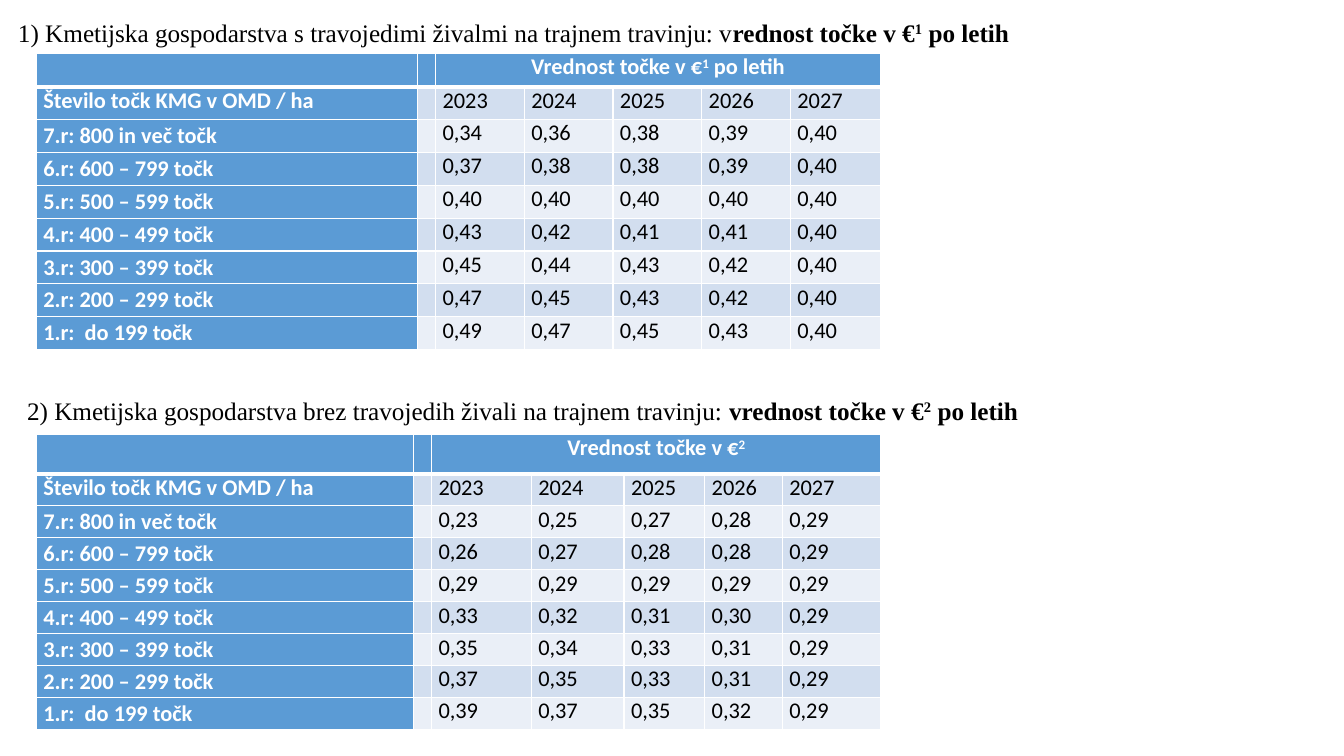
from dataclasses import dataclass
from lxml import etree
from pptx import Presentation
from pptx.dml.color import RGBColor
from pptx.enum import text as tx
from pptx.oxml import ns
from pptx.util import Inches, Pt


@dataclass(frozen=True)
class Theme:
    head: str = "5B9BD5"
    dark: str = "D2DEEF"
    light: str = "EAEFF7"
    white: str = "FFFFFF"
    black: str = "000000"
    serif: str = "Times New Roman"
    sans: str = "Calibri"
    title: int = 18
    body: int = 16
    gap: float = 0.9
    thin: int = 1
    thick: int = 3


T = Theme()
YEARS = ["2023", "2024", "2025", "2026", "2027"]
LABELS = [
    "Število točk KMG v OMD / ha",
    "7.r: 800 in več točk",
    "6.r: 600 – 799 točk",
    "5.r: 500 – 599 točk",
    "4.r: 400 – 499 točk",
    "3.r: 300 – 399 točk",
    "2.r: 200 – 299 točk",
    "1.r:  do 199 točk",
]
GRAZING = [
    "0,34 0,36 0,38 0,39 0,40",
    "0,37 0,38 0,38 0,39 0,40",
    "0,40 0,40 0,40 0,40 0,40",
    "0,43 0,42 0,41 0,41 0,40",
    "0,45 0,44 0,43 0,42 0,40",
    "0,47 0,45 0,43 0,42 0,40",
    "0,49 0,47 0,45 0,43 0,40",
]
OTHER = [
    "0,23 0,25 0,27 0,28 0,29",
    "0,26 0,27 0,28 0,28 0,29",
    "0,29 0,29 0,29 0,29 0,29",
    "0,33 0,32 0,31 0,30 0,29",
    "0,35 0,34 0,33 0,31 0,29",
    "0,37 0,35 0,33 0,31 0,29",
    "0,39 0,37 0,35 0,32 0,29",
]


def style(para, face, size, color, bold=None):
    para.space_after = Pt(T.gap)
    font = para.font
    font.name, font.size, font.bold = face, Pt(size), bold
    font.color.rgb = RGBColor.from_string(color)


def add_run(para, words, bold=None, raised=False):
    run = para.add_run()
    run.text = words
    if bold is not None:
        run.font.bold = bold
    if raised:
        run._r.get_or_add_rPr().set("baseline", "30000")


def add_title(slide, box, plain, strong, mark, align):
    frame = slide.shapes.add_textbox(*map(Inches, box)).text_frame
    frame.word_wrap = True
    frame.auto_size = tx.MSO_AUTO_SIZE.SHAPE_TO_FIT_TEXT
    para = frame.paragraphs[0]
    para.alignment = align
    style(para, T.serif, T.title, T.black)
    add_run(para, plain, False)
    add_run(para, strong, True)
    add_run(para, mark, True, True)
    add_run(para, " po letih", True)


def set_edges(cell, top, bottom):
    props = cell._tc.get_or_add_tcPr()
    widths = {"L": T.thin, "R": T.thin, "T": top, "B": bottom}
    for spot, (side, width) in enumerate(widths.items()):
        line = etree.Element(ns.qn(f"a:ln{side}"), w=str(Pt(width)))
        fill = etree.SubElement(line, ns.qn("a:solidFill"))
        etree.SubElement(fill, ns.qn("a:srgbClr"), val=T.white)
        props.insert(spot, line)


def dress(cell, row, col):
    cell.margin_left = cell.margin_right = Inches(0.07)
    cell.margin_top = cell.margin_bottom = 0
    head = row == 0 or col == 0
    band = T.dark if row % 2 else T.light
    cell.fill.solid()
    cell.fill.fore_color.rgb = RGBColor.from_string(T.head if head else band)
    set_edges(cell, T.thick if row == 1 else T.thin,
              T.thick if row == 0 else T.thin)
    if col == 0 and row > 1:
        cell.vertical_anchor = tx.MSO_ANCHOR.MIDDLE
    style(cell.text_frame.paragraphs[0], T.sans, T.body,
          T.white if head else T.black, head)


def add_grid(slide, box, top, cols, mark, tail, values):
    rows = [YEARS] + [line.split() for line in values]
    grid = slide.shapes.add_table(
        len(rows) + 1, len(cols), *map(Inches, box)).table
    grid.horz_banding = False
    for col, width in zip(grid.columns, cols):
        col.width = Inches(width)
    step = (box[3] - top) / len(rows)
    for num, row in enumerate(grid.rows):
        row.height = Inches(step if num else top)
        for col, cell in enumerate(row.cells):
            if num and col != 1:
                words = rows[num - 1][col - 2] if col else LABELS[num - 1]
                add_run(cell.text_frame.paragraphs[0], words)
            dress(cell, num, col)
    span = grid.cell(0, 2)
    span.merge(grid.cell(0, len(cols) - 1))
    para = span.text_frame.paragraphs[0]
    para.alignment = tx.PP_ALIGN.CENTER
    add_run(para, "Vrednost točke v €")
    add_run(para, mark, raised=True)
    if tail:
        add_run(para, tail)


def main():
    deck = Presentation()
    deck.slide_width, deck.slide_height = Inches(13.33), Inches(7.5)
    slide = deck.slides.add_slide(deck.slide_layouts[6])
    add_title(slide, (0.08, 0.12, 12.02, 0.4),
              "1) Kmetijska gospodarstva s travojedimi živalmi na trajnem travinju: v",
              "rednost točke v €", "1", tx.PP_ALIGN.JUSTIFY)
    add_grid(slide, (0.36, 0.53, 8.38, 2.94), 0.33,
             [3.78, 0.18] + [0.88] * 4 + [0.89], "1", " po letih", GRAZING)
    add_title(slide, (0.17, 3.87, 12.2, 0.4),
              "2) Kmetijska gospodarstva brez travojedih živali na trajnem travinju: ",
              "vrednost točke v €", "2", tx.PP_ALIGN.LEFT)
    add_grid(slide, (0.36, 4.31, 8.38, 2.93), 0.39,
             [3.74, 0.18, 0.99, 0.92, 0.8, 0.77, 0.98], "2", "", OTHER)
    deck.save("out.pptx")


if __name__ == "__main__":
    main()
